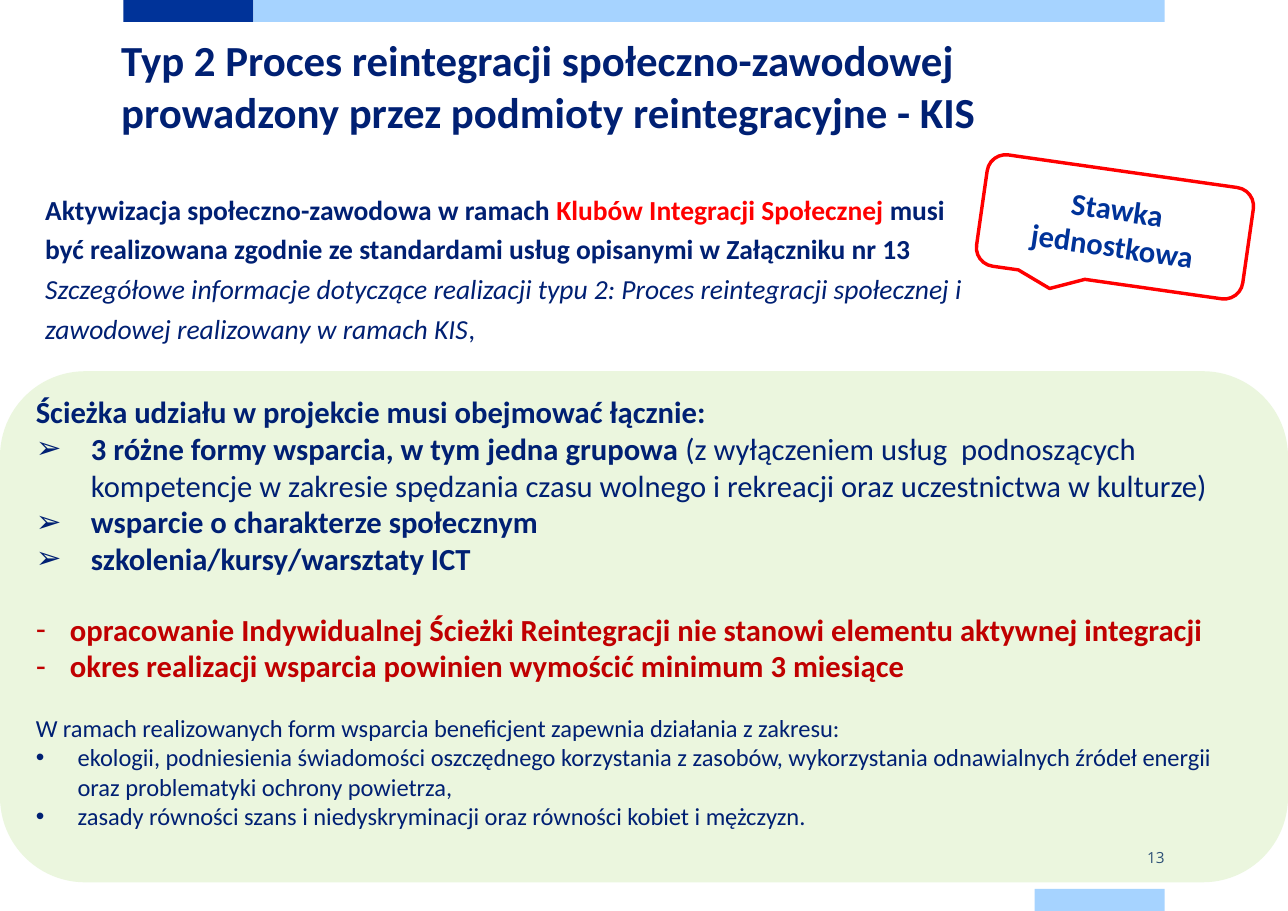
import pptx
import pptx.util
import pptx.dml.color
import pptx.enum.shapes
import pptx.enum.text
import pptx.oxml.ns
import lxml.etree

SIZE = (11.69, 8.27)
NAVY, BLUE, SKY, RED, DARK = "002073", "003399", "A6D3FF", "FF0000", "C00000"
GREEN, CLEAR = "B2DE82", 26

BARS = [
    (1.12, 0, 1.18, 0.2, BLUE),
    (2.3, 0, 8.27, 0.2, SKY),
    (9.39, 8.07, 1.18, 0.2, SKY),
]
TITLE = "Typ 2 Proces reintegracji społeczno-zawodowej prowadzony przez podmioty reintegracyjne - KIS"
INTRO = [
    ("Aktywizacja społeczno-zawodowa w ramach ", dict(bold=True)),
    ("Klubów Integracji Społecznej ", dict(bold=True, color=RED)),
    ("musi być realizowana zgodnie ze standardami usług opisanymi w Załączniku nr 13 ", dict(bold=True)),
    ("Szczegółowe informacje dotyczące realizacji typu 2: Proces reintegracji społecznej i "
     "zawodowej realizowany w ramach KIS", dict(italic=True)),
    (",", {}),
]
HEAD = dict(size=20, bold=True)
ARROW = dict(size=20, bold=True, mark="➢", indent=0.5)
DASH = dict(size=20, bold=True, color=DARK, mark="-", indent=0.31)
DOT = dict(size=16, mark="•", indent=0.38)
PATH = [
    ("Ścieżka udziału w projekcie musi obejmować łącznie:", HEAD),
    ([("3 różne formy wsparcia, w tym jedna grupowa ", {}),
      ("(z wyłączeniem usług  podnoszących kompetencje w zakresie spędzania czasu wolnego "
       "i rekreacji oraz uczestnictwa w kulturze)", dict(bold=False))], ARROW),
    ("wsparcie o charakterze społecznym", ARROW),
    ("szkolenia/kursy/warsztaty ICT", ARROW),
    ("opracowanie Indywidualnej Ścieżki Reintegracji nie stanowi elementu aktywnej integracji",
     dict(DASH, before=22)),
    ("okres realizacji wsparcia powinien wymościć minimum 3 miesiące", DASH),
    ("W ramach realizowanych form wsparcia beneficjent zapewnia działania z zakresu:",
     dict(size=16, before=19)),
    ("ekologii, podniesienia świadomości oszczędnego korzystania z zasobów, wykorzystania "
     "odnawialnych źródeł energii oraz problematyki ochrony powietrza,", DOT),
    ("zasady równości szans i niedyskryminacji oraz równości kobiet i mężczyzn.", DOT),
]

Inches, Pt = pptx.util.Inches, pptx.util.Pt
Kind = pptx.enum.shapes.MSO_SHAPE
Align, Anchor = pptx.enum.text.PP_ALIGN, pptx.enum.text.MSO_ANCHOR
qn = pptx.oxml.ns.qn


def paint(target, code):
    target.rgb = pptx.dml.color.RGBColor.from_string(code)


def setup(frame, anchor, pad=(0.1, 0.05, 0.1, 0.05)):
    frame.word_wrap = True
    frame.auto_size = pptx.enum.text.MSO_AUTO_SIZE.NONE
    frame.vertical_anchor = anchor
    (frame.margin_left, frame.margin_top,
     frame.margin_right, frame.margin_bottom) = map(Inches, pad)


def write(para, text, align=Align.LEFT, space=1, before=0, mark=None, indent=0, **base):
    para.alignment, para.line_spacing, para.space_before = align, space, Pt(before)
    if mark:
        props = para._p.get_or_add_pPr()
        props.set("marL", str(Inches(indent)))
        props.set("indent", str(-Inches(indent)))
        lxml.etree.SubElement(props, qn("a:buFont")).set("typeface", "Arial")
        lxml.etree.SubElement(props, qn("a:buChar")).set("char", mark)
    for part, extra in [(text, {})] if isinstance(text, str) else text:
        look = dict(size=18, bold=False, italic=False, color=NAVY, face="Calibri") | base | extra
        run = para.add_run()
        run.text = part
        font = run.font
        font.name, font.size = look["face"], Pt(look["size"])
        font.bold, font.italic = look["bold"], look["italic"]
        paint(font.color, look["color"])


def shape(kind, box, fill=None, line=None):
    item = slide.shapes.add_shape(kind, *map(Inches, box))
    item.shadow.inherit = False
    if fill:
        item.fill.solid()
        paint(item.fill.fore_color, fill)
    else:
        item.fill.background()
    if line:
        paint(item.line.color, line)
        item.line.width = Pt(2.25)
    else:
        item.line.fill.background()
    return item


def label(box, anchor, pad):
    frame = slide.shapes.add_textbox(*map(Inches, box)).text_frame
    setup(frame, anchor, pad)
    return frame


deck = pptx.Presentation()
deck.slide_width, deck.slide_height = map(Inches, SIZE)
slide = deck.slides.add_slide(deck.slide_layouts[5])

for *box, code in BARS:
    shape(Kind.RECTANGLE, box, code)

frame = label((9.39, 7.68, 1.18, 0.2), Anchor.MIDDLE, (0, 0.08, 0, 0.08))
write(frame.paragraphs[0], "13", align=Align.RIGHT, size=10, face="Open Sans")

frame = label((0.41, 1.69, 8.43, 1.17), Anchor.TOP, (0, 0, 0, 0))
write(frame.paragraphs[0], INTRO, space=1.2)

panel = shape(Kind.ROUNDED_RECTANGLE, (0, 3.37, 11.69, 4.64), GREEN)
tint = panel.fill._xPr.find(qn("a:solidFill"))[0]
lxml.etree.SubElement(tint, qn("a:alpha")).set("val", str(CLEAR * 1000))
frame = panel.text_frame
setup(frame, Anchor.MIDDLE, (0.1, 0.05, 0.1, 0.32))
for spot, (text, look) in enumerate(PATH):
    write(frame.add_paragraph() if spot else frame.paragraphs[0], text, **look)

rate = shape(Kind.ROUNDED_RECTANGULAR_CALLOUT, (8.9, 1.55, 2.44, 1.02), line=RED)
rate.rotation = 8.1
setup(rate.text_frame, Anchor.MIDDLE)
write(rate.text_frame.paragraphs[0], "Stawka jednostkowa",
      align=Align.CENTER, size=20, bold=True, color=BLUE)

title = slide.shapes.title
title.left, title.top, title.width, title.height = map(Inches, (1, 0.26, 9.69, 1.04))
setup(title.text_frame, Anchor.TOP)
write(title.text_frame.paragraphs[0], TITLE, size=28, bold=True)

deck.save("out.pptx")
